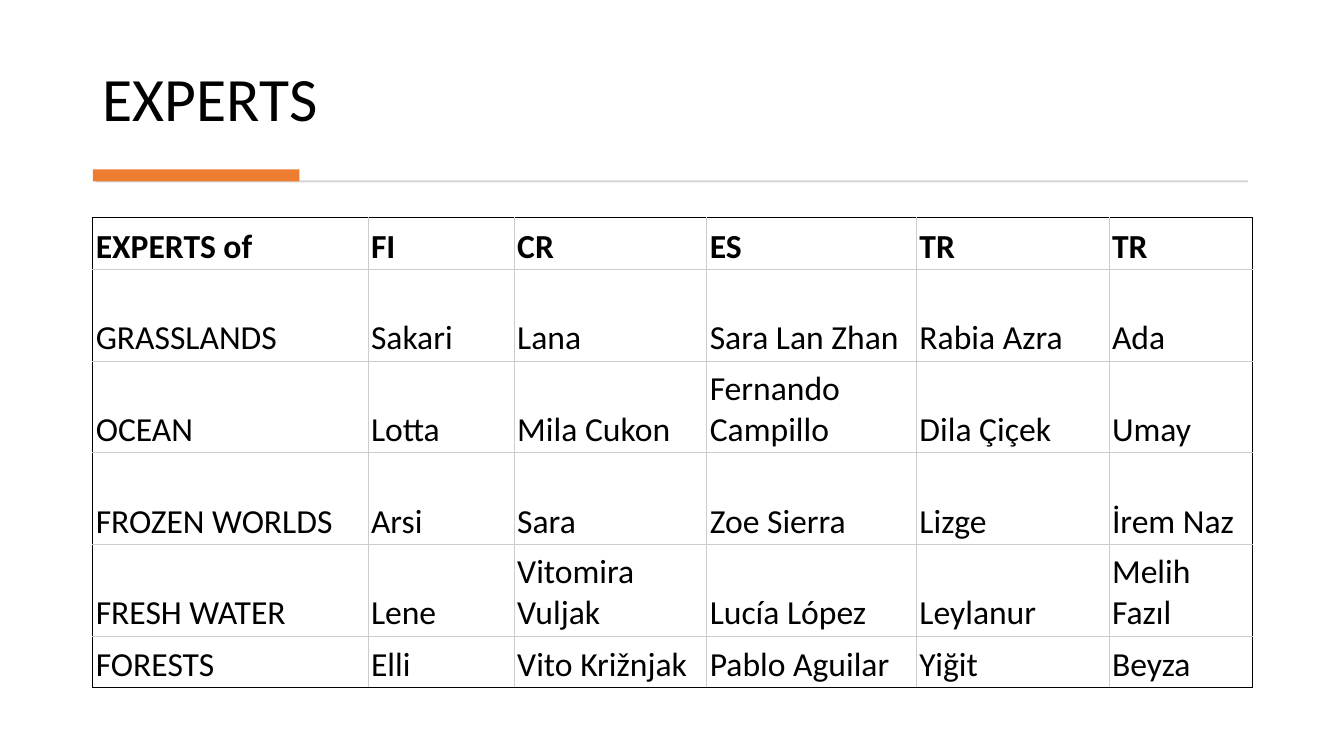
"""Build the slide listing the experts on each habitat by country."""
from lxml import etree
from pptx import Presentation
from pptx.dml.color import RGBColor
from pptx.enum import shapes, text
from pptx.oxml import ns
from pptx.util import Inches, Pt

BLACK = RGBColor(0x00, 0x00, 0x00)
RULE_GREY = RGBColor(0xD5, 0xD5, 0xD5)
GRID_GREY = RGBColor(0xCC, 0xCC, 0xCC)
ORANGE = RGBColor(0xED, 0x7D, 0x31)
FONT = "Calibri"

EXPERTS = [
    ["EXPERTS of", "FI", "CR", "ES", "TR", "TR"],
    ["GRASSLANDS", "Sakari", "Lana", "Sara Lan Zhan", "Rabia Azra", "Ada"],
    ["OCEAN", "Lotta", "Mila Cukon", "Fernando Campillo", "Dila Çiçek", "Umay"],
    ["FROZEN WORLDS", "Arsi", "Sara", "Zoe Sierra", "Lizge", "İrem Naz"],
    ["FRESH WATER", "Lene", "Vitomira Vuljak", "Lucía López", "Leylanur", "Melih Fazıl"],
    ["FORESTS", "Elli", "Vito Križnjak", "Pablo Aguilar", "Yiğit", "Beyza"],
]
COLUMN_WIDTHS = [2.73, 1.45, 1.91, 2.08, 1.91, 1.42]
ROW_HEIGHTS = [0.51, 0.91, 0.91, 0.91, 0.91, 0.51]


def style_text(frame, size, bold=False):
    for para in frame.paragraphs:
        para.alignment = text.PP_ALIGN.LEFT
        for span in para.runs:
            span.font.name = FONT
            span.font.size = Pt(size)
            span.font.bold = bold
            span.font.color.rgb = BLACK


def add_border(cell, side, color):
    line = etree.SubElement(cell._tc.get_or_add_tcPr(), ns.qn(f"a:{side}"), w=str(Pt(0.5)))
    fill = etree.SubElement(line, ns.qn("a:solidFill"))
    etree.SubElement(fill, ns.qn("a:srgbClr"), val=str(color))


deck = Presentation()
deck.slide_width, deck.slide_height = Inches(13.33), Inches(7.5)
page = deck.slides.add_slide(deck.slide_layouts[5])

title = page.shapes.title
title.left, title.top = Inches(0.92), Inches(0.28)
title.width, title.height = Inches(11.49), Inches(1.11)
title.text_frame.text = "EXPERTS"
title.text_frame.vertical_anchor = text.MSO_ANCHOR.BOTTOM
title.text_frame.paragraphs[0].line_spacing = 0.9
style_text(title.text_frame, 44)

for left, top, width, height, color in [
    (0.95, 1.79, 11.43, 0.02, RULE_GREY),
    (0.92, 1.68, 2.05, 0.12, ORANGE),
]:
    bar = page.shapes.add_shape(
        shapes.MSO_SHAPE.RECTANGLE, Inches(left), Inches(top), Inches(width), Inches(height)
    )
    bar.shadow.inherit = False
    bar.fill.solid()
    bar.fill.fore_color.rgb = color
    bar.line.fill.background()

last_row, last_column = len(ROW_HEIGHTS) - 1, len(COLUMN_WIDTHS) - 1
table = page.shapes.add_table(
    len(ROW_HEIGHTS), len(COLUMN_WIDTHS), Inches(0.92), Inches(2.16),
    Inches(sum(COLUMN_WIDTHS)), Inches(sum(ROW_HEIGHTS)),
).table
table.horz_banding = False
for column, width in zip(table.columns, COLUMN_WIDTHS):
    column.width = Inches(width)

for row_index, names in enumerate(EXPERTS):
    table.rows[row_index].height = Inches(ROW_HEIGHTS[row_index])
    for column_index, name in enumerate(names):
        cell = table.cell(row_index, column_index)
        cell.text_frame.text = name
        cell.vertical_anchor = text.MSO_ANCHOR.BOTTOM
        cell.margin_left = cell.margin_right = Inches(0.03)
        cell.margin_top = cell.margin_bottom = Inches(0.02)
        style_text(cell.text_frame, 24, bold=row_index == 0)
        outer_sides = {
            "lnL": column_index == 0,
            "lnR": column_index == last_column,
            "lnT": row_index == 0,
            "lnB": row_index == last_row,
        }
        for side, is_outer in outer_sides.items():
            add_border(cell, side, BLACK if is_outer else GRID_GREY)
        cell.fill.background()

deck.save("out.pptx")
